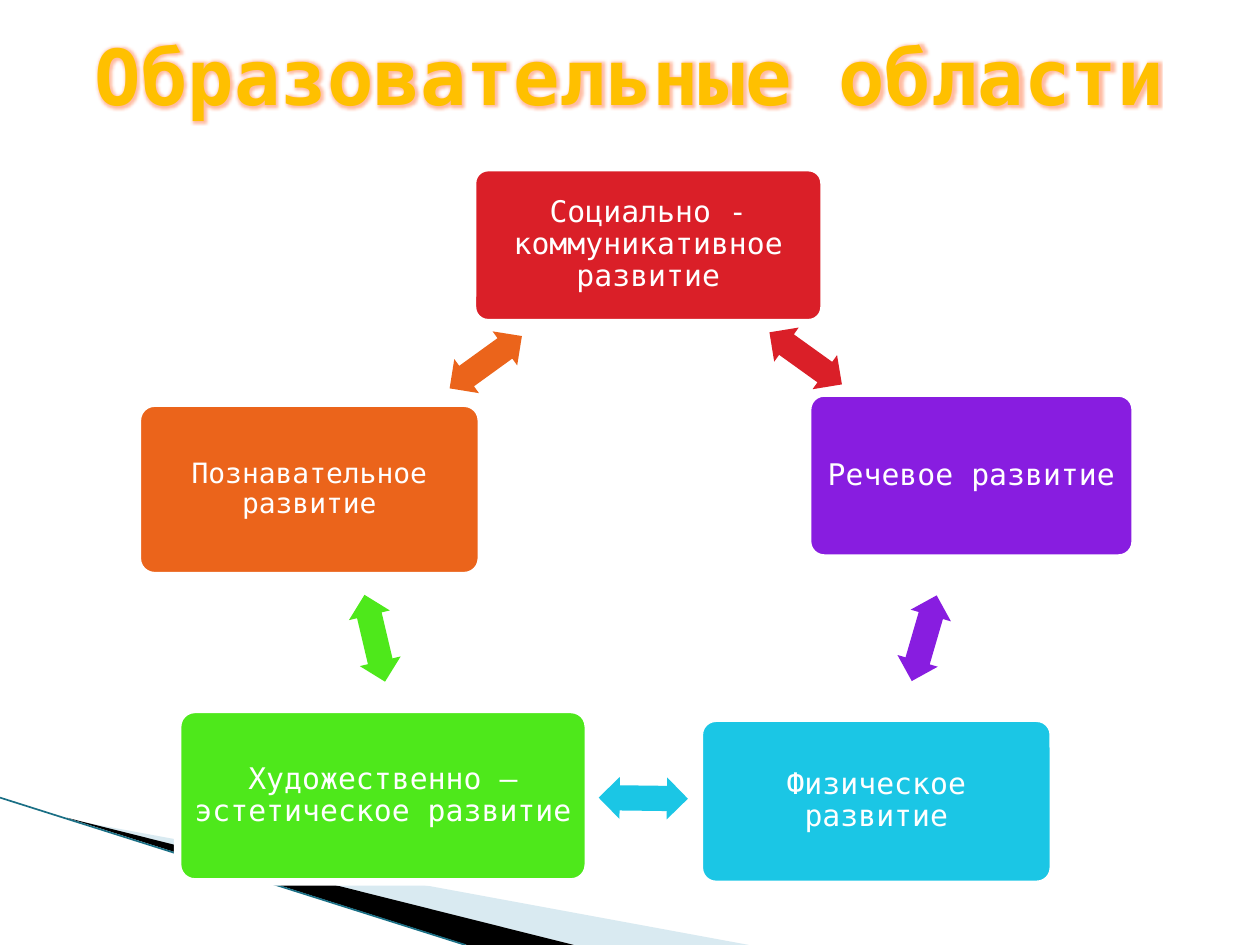
import pptx
import pptx.dml.color
import pptx.enum.shapes
import pptx.enum.text
import pptx.oxml
import pptx.oxml.ns
import pptx.util

Pt = pptx.util.Pt
SHAPES = pptx.enum.shapes.MSO_SHAPE
COLORS = {
    "white": "FFFFFF", "black": "000000", "amber": "FFC000",
    "outline": "F9000C", "glow": "FF6A30", "pale": "A0CBDC", "teal": "1A6F85",
    "red": "DA1F28", "purple": "881DE0", "cyan": "1BC6E5",
    "green": "4EE81B", "orange": "EB641B",
}
ARROW_WIDTH, ARROW_HEIGHT = 51, 24

# text, color, box (left, top, width, height), font size, arrow centre, arrow angle
AREAS = [
    ("Социально - коммуникативное развитие", "red",
     (270, 95.8, 200.9, 88.6), 17, (460.4, 204.8), 35.7),
    ("Речевое развитие", "purple",
     (461.5, 224.6, 187.2, 94.3), 17, (528.1, 364.7), 106.2),
    ("Физическое развитие", "cyan",
     (399.6, 410.4, 202.3, 95), 17, (367.6, 456.1), 180.7),
    ("Художественно – эстетическое развитие", "green",
     (101.5, 405.4, 234.7, 98.6), 17, (214.2, 364.7), 256.7),
    ("Познавательное развитие", "orange",
     (78.5, 230.4, 196.6, 98.6), 16, (277.6, 207), 324.1),
]


def rgb(name):
    return pptx.dml.color.RGBColor.from_string(COLORS[name])


def xml(text):
    return pptx.oxml.parse_xml(text.replace(">", f" {pptx.oxml.ns.nsdecls('a')}>", 1))


class Painter:
    font_name = "DejaVu Sans Mono"

    def __init__(self, slide):
        self.slide = slide

    def text(self, frame, text, size, color, margin=0, spacing=1.0, bold=False):
        frame.word_wrap = True
        frame.vertical_anchor = pptx.enum.text.MSO_ANCHOR.MIDDLE
        frame.margin_left = frame.margin_right = Pt(margin)
        frame.margin_top = frame.margin_bottom = Pt(margin)
        frame.text = text
        paragraph = frame.paragraphs[0]
        paragraph.alignment = pptx.enum.text.PP_ALIGN.CENTER
        paragraph.line_spacing = spacing
        run = paragraph.runs[0]
        run.font.name = self.font_name
        run.font.size = Pt(size)
        run.font.bold = bold
        run.font.color.rgb = rgb(color)
        return run

    def title(self, text, left, top, width, height):
        box = self.slide.shapes.add_textbox(Pt(left), Pt(top), Pt(width), Pt(height))
        run = self.text(box.text_frame, text, 44.1, "amber", bold=True)
        properties = run.font._element
        properties.insert(0, xml(
            f'<a:ln w="{Pt(1.42)}"><a:solidFill><a:srgbClr val="{COLORS["outline"]}"/>'
            '</a:solidFill></a:ln>'))
        properties.insert(2, xml(
            f'<a:effectLst><a:glow rad="{Pt(5)}"><a:srgbClr val="{COLORS["glow"]}">'
            '<a:alpha val="45000"/></a:srgbClr></a:glow></a:effectLst>'))

    def shape(self, kind, left, top, width, height, color):
        shape = self.slide.shapes.add_shape(kind, Pt(left), Pt(top), Pt(width), Pt(height))
        self.fill(shape, color)
        return shape

    def fill(self, shape, color):
        shape.shadow.inherit = False
        shape.fill.solid()
        shape.fill.fore_color.rgb = rgb(color)
        shape.line.fill.background()

    def area(self, text, color, box, size):
        shape = self.shape(SHAPES.ROUNDED_RECTANGLE, *box, color)
        shape.adjustments[0] = 0.1
        shape.line.color.rgb = rgb("white")
        shape.line.width = Pt(4.33)
        self.text(shape.text_frame, text, size, "white", margin=5, spacing=0.9)

    def arrow(self, center, angle, color):
        left, top = center[0] - ARROW_WIDTH / 2, center[1] - ARROW_HEIGHT / 2
        shape = self.shape(SHAPES.LEFT_RIGHT_ARROW, left, top, ARROW_WIDTH, ARROW_HEIGHT, color)
        shape.adjustments[0] = 0.6
        shape.adjustments[1] = 0.5
        shape.rotation = angle

    def polygon(self, points, color, opacity=100):
        start, *others = [(Pt(x), Pt(y)) for x, y in points]
        builder = self.slide.shapes.build_freeform(*start)
        builder.add_line_segments(others)
        shape = builder.convert_to_shape()
        self.fill(shape, color)
        if opacity < 100:
            color_element = shape.fill._xPr.find(".//" + pptx.oxml.ns.qn("a:srgbClr"))
            color_element.append(xml(f'<a:alpha val="{opacity * 1000}"></a:alpha>'))

    def line(self, start, end, color, width):
        connector = self.slide.shapes.add_connector(
            pptx.enum.shapes.MSO_CONNECTOR.STRAIGHT, *map(Pt, start + end))
        connector.line.color.rgb = rgb(color)
        connector.line.width = Pt(width)
        connector._element.spPr.append(xml("<a:effectLst></a:effectLst>"))


def main():
    presentation = pptx.Presentation()
    presentation.slide_width, presentation.slide_height = Pt(720), Pt(540)
    painter = Painter(presentation.slides.add_slide(presentation.slide_layouts[6]))

    painter.polygon([(39.6, 468.4), (428, 540), (328, 540)], "pale", opacity=40)
    painter.polygon([(38.2, 467.3), (328, 540), (267, 540)], "black")
    painter.line((0, 455.8), (266, 540), "teal", 0.95)

    painter.title("Образовательные области", 36, 17, 648, 51)
    for text, color, box, size, center, angle in AREAS:
        painter.area(text, color, box, size)
        painter.arrow(center, angle, color)

    presentation.save("out.pptx")


if __name__ == "__main__":
    main()
